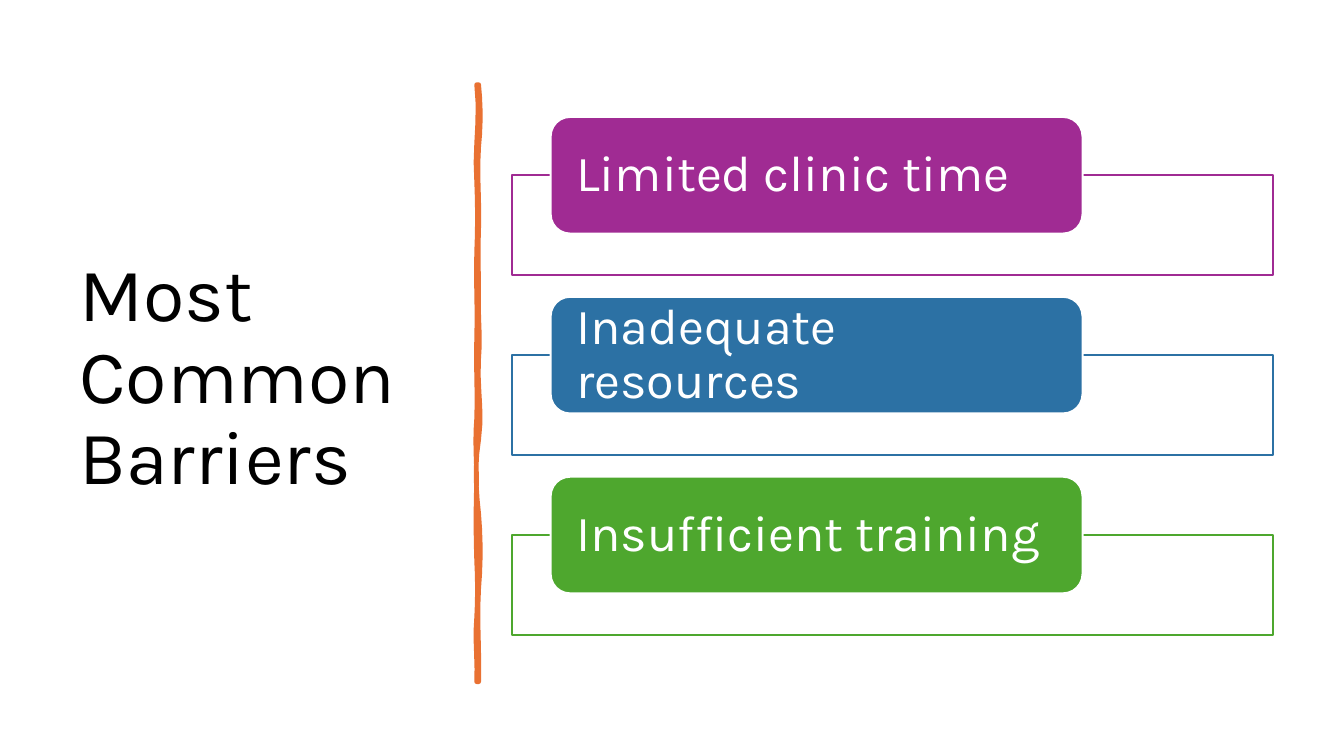
from dataclasses import dataclass
from itertools import pairwise

from pptx import Presentation
from pptx.dml.color import RGBColor as RGB
from pptx.enum.shapes import MSO_SHAPE as Kind
from pptx.enum.text import MSO_ANCHOR as Anchor, PP_ALIGN as Align
from pptx.shapes.autoshape import Shape
from pptx.shapes.shapetree import SlideShapes as Shapes
from pptx.text.text import TextFrame as Frame
from pptx.util import Pt


@dataclass(frozen=True)
class Theme:
    """Colours and type sizes of the slide."""
    font: str = "Karla"
    head: float = 54
    body: float = 36
    ink: str = "000000"
    paper: str = "FFFFFF"
    rule: str = "E97132"


@dataclass(frozen=True)
class Box:
    """A rectangle in points."""
    left: float
    top: float
    width: float
    height: float

    def down(self, gap: float) -> "Box":
        """Return the box moved down by a gap."""
        return Box(self.left, self.top + gap, self.width, self.height)

    def args(self) -> tuple[Pt, ...]:
        """Return the four lengths for a shape call."""
        return Pt(self.left), Pt(self.top), Pt(self.width), Pt(self.height)


@dataclass(frozen=True)
class Item:
    """A barrier and its colour."""
    text: str
    tint: str


@dataclass(frozen=True)
class Bend:
    """A stretch of brush edge: its end height and its two sideways pulls."""
    end: float
    near: float
    far: float


THEME = Theme()
TITLE = Box(49.7, 50.4, 269.3, 440)
FRAME = Box(366, 125.2, 543.5, 71.4)
LABEL = Box(393.3, 83.5, 380, 83.4)
STEP = 128.5
ITEMS = (
    Item("Limited clinic time", "A02B93"),
    Item("Inadequate resources", "2C71A4"),
    Item("Insufficient training", "4EA72E"),
)
TOP = 60.5
RIGHT = (
    Bend(105, 1.5, 1.5), Bend(163, -1.5, 0.7), Bend(212, -0.7, 0),
    Bend(256, -0.7, 1.5), Bend(314, -1.5, 3), Bend(367, -3, -2),
    Bend(420.5, 1.5, 1.5), Bend(487, -1.5, 0.7),
)
LEFT = (
    Bend(441, 0.7, -1.5), Bend(401, 0.7, 0.7), Bend(343.5, -0.7, -0.7),
    Bend(299, 0, -1.5), Bend(241, 0.7, -0.7), Bend(180, 0.7, -0.7),
    Bend(130, 0.7, 0.7), Bend(TOP, -2, 3),
)


def paint(shape: Shape, fill: str, line: str, width: float) -> None:
    """Set the fill and outline of a shape and drop its shadow."""
    shape.shadow.inherit = False
    shape.fill.solid()
    shape.fill.fore_color.rgb = RGB.from_string(fill)
    shape.line.color.rgb = RGB.from_string(line)
    shape.line.width = Pt(width)


def write(frame: Frame, text: str, size: float, tint: str) -> None:
    """Write one left-aligned paragraph, centred in height."""
    frame.word_wrap = True
    frame.vertical_anchor = Anchor.MIDDLE
    para = frame.paragraphs[0]
    para.text = text
    para.alignment = Align.LEFT
    para.line_spacing = 0.9
    para.font.name = THEME.font
    para.font.size = Pt(size)
    para.font.color.rgb = RGB.from_string(tint)


def trace(base: float, start: float, bends: tuple[Bend, ...]) -> list[tuple[Pt, Pt]]:
    """Return points along one wavy edge of the brush stroke."""
    spots = []
    ends = [start, *(bend.end for bend in bends)]
    for (low, high), bend in zip(pairwise(ends), bends):
        for t in (0.2, 0.4, 0.6, 0.8, 1):
            pull = 3 * t * (1 - t) * ((1 - t) * bend.near + t * bend.far)
            spots.append((Pt(base + pull), Pt(low + t * (high - low))))
    return spots


def add_rule(shapes: Shapes) -> None:
    """Draw the upright brush stroke."""
    pen = shapes.build_freeform(Pt(342), Pt(TOP))
    pen.add_line_segments(trace(342, TOP, RIGHT), close=False)
    pen.add_line_segments([(Pt(340.5), Pt(487)), *trace(340.5, 487, LEFT)])
    paint(pen.convert_to_shape(), THEME.rule, THEME.rule, 3.25)


def add_item(shapes: Shapes, item: Item, gap: float) -> None:
    """Draw a barrier label over its frame."""
    frame = shapes.add_shape(Kind.RECTANGLE, *FRAME.down(gap).args())
    paint(frame, THEME.paper, item.tint, 1.5)
    label = shapes.add_shape(Kind.ROUNDED_RECTANGLE, *LABEL.down(gap).args())
    paint(label, item.tint, THEME.paper, 1.5)
    text = label.text_frame
    text.margin_left = text.margin_right = Pt(14.4)
    text.margin_top = text.margin_bottom = Pt(0)
    write(text, item.text, THEME.body, THEME.paper)


def main() -> None:
    """Build and save the slide."""
    deck = Presentation()
    deck.slide_width, deck.slide_height = Pt(960), Pt(540)
    shapes = deck.slides.add_slide(deck.slide_layouts[6]).shapes
    title = shapes.add_textbox(*TITLE.args())
    write(title.text_frame, "Most Common Barriers", THEME.head, THEME.ink)
    add_rule(shapes)
    for row, item in enumerate(ITEMS):
        add_item(shapes, item, row * STEP)
    deck.save("out.pptx")


if __name__ == "__main__":
    main()
